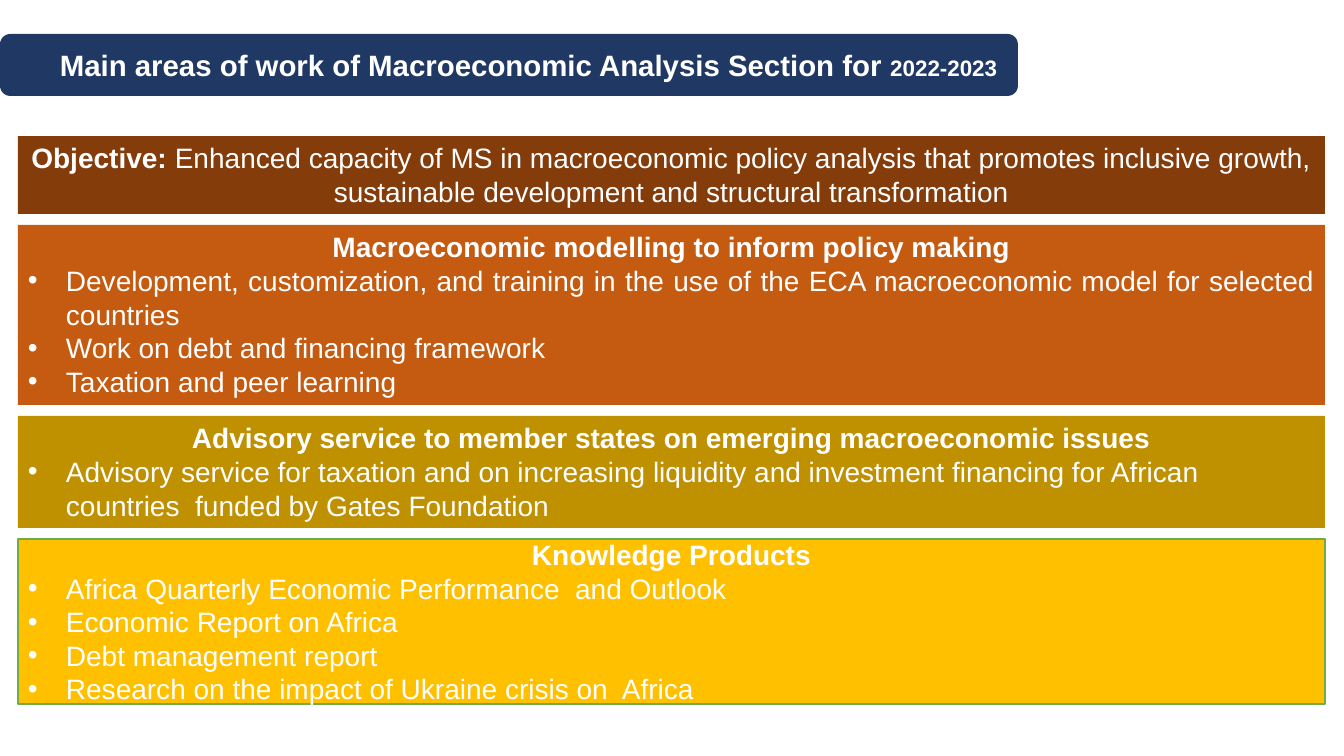
from pptx import Presentation
from pptx import util as u
from pptx.dml.color import RGBColor
from pptx.enum import shapes, text
from lxml import etree

# Content
TITLE = [("Main areas of work of Macroeconomic Analysis Section for ", 21),
         ("2022-2023", 16)]
GOAL = ("Objective: ",
        "Enhanced capacity of MS in macroeconomic policy analysis that promotes "
        "inclusive growth, sustainable development and structural transformation")
# fill, height, heading, bullets, justified
AREAS = [
    ("C55A11", 180, "Macroeconomic modelling to inform policy making",
     ["Development, customization, and training in the use of the ECA "
      "macroeconomic model for selected countries",
      "Work on debt and financing framework",
      "Taxation and peer learning"], True),
    ("BF9000", 112, "Advisory service to member states on emerging macroeconomic issues",
     ["Advisory service for taxation and on increasing liquidity and investment "
      "financing for African countries  funded by Gates Foundation"], False),
    ("FFC000", 165, "Knowledge Products",
     ["Africa Quarterly Economic Performance  and Outlook",
      "Economic Report on Africa",
      "Debt management report",
      "Research on the impact of Ukraine crisis on  Africa"], False),
]
LEFT, TOP, WIDTH, GAP, GOAL_H = 18, 136, 1307, 11, 78
INDENT = 38


def px(n):
    return u.Emu(round(n * 914400 / 100.8))


def color(code):
    return RGBColor.from_string(code)


def box(kind, x, y, w, h, fill):
    s = slide.shapes.add_shape(kind, px(x), px(y), px(w), px(h))
    s.shadow.inherit = False
    s.fill.solid()
    s.fill.fore_color.rgb = color(fill)
    s.line.fill.background()
    frame = s.text_frame
    frame.word_wrap = True
    frame.vertical_anchor = text.MSO_ANCHOR.TOP
    frame.auto_size = text.MSO_AUTO_SIZE.SHAPE_TO_FIT_TEXT
    return s, frame


def style(para, size=20, bold=None):
    para.alignment = para.alignment or text.PP_ALIGN.LEFT
    font = para.font
    font.name, font.size, font.bold = "Arial", u.Pt(size), bold
    font.color.rgb = color("FFFFFF")


def bullet(para):
    props = para._p.get_or_add_pPr()
    props.set("marL", str(px(INDENT)))
    props.set("indent", str(-px(INDENT)))
    ns = "{http://schemas.openxmlformats.org/drawingml/2006/main}"
    etree.SubElement(props, ns + "buFont").set("typeface", "Arial")
    etree.SubElement(props, ns + "buChar").set("char", "•")


deck = Presentation()
deck.slide_width, deck.slide_height = px(1344), px(756)
slide = deck.slides.add_slide(deck.slide_layouts[6])

# Title banner
banner, frame = box(shapes.MSO_SHAPE.ROUNDED_RECTANGLE, 0, 34, 1018, 62, "203864")
frame.vertical_anchor = text.MSO_ANCHOR.MIDDLE
frame.margin_top = frame.margin_bottom = px(10)
head = frame.paragraphs[0]
head._p.get_or_add_pPr().set("marL", str(px(39)))
style(head, TITLE[0][1], True)
for words, size in TITLE:
    run = head.add_run()
    run.text, run.font.size = words, u.Pt(size)

# Objective
bar, frame = box(shapes.MSO_SHAPE.RECTANGLE, LEFT, TOP, WIDTH, GOAL_H, "843C0B")
goal = frame.paragraphs[0]
style(goal)
for words, bold in zip(GOAL, (True, False)):
    run = goal.add_run()
    run.text, run.font.bold = words, bold

# Work areas, stacked below the objective
y = TOP + GOAL_H + GAP
for fill, h, name, items, just in AREAS:
    bar, frame = box(shapes.MSO_SHAPE.RECTANGLE, LEFT, y, WIDTH, h, fill)
    frame.paragraphs[0].text = name
    style(frame.paragraphs[0], bold=True)
    for item in items:
        para = frame.add_paragraph()
        para.text = item
        bullet(para)
        if just:
            para.alignment = text.PP_ALIGN.JUSTIFY
        style(para)
    y += h + GAP

# The last area is outlined and keeps its height
bar.line.color.rgb = color("70AD47")
bar.line.width = u.Pt(1)
frame.auto_size = text.MSO_AUTO_SIZE.NONE
frame.vertical_anchor = text.MSO_ANCHOR.MIDDLE

deck.save("out.pptx")
